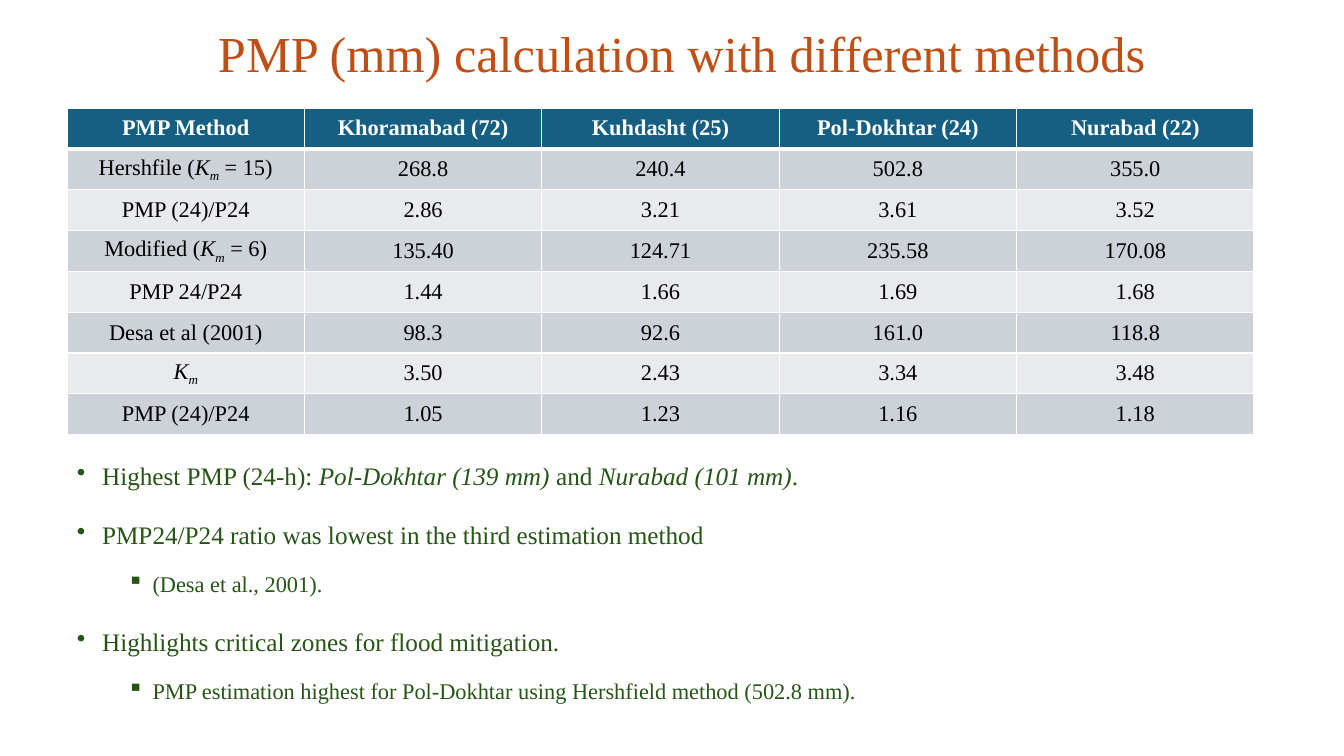
from dataclasses import dataclass

from lxml import etree
from pptx import Presentation
from pptx import util as u
from pptx.dml.color import RGBColor
from pptx.enum import text
from pptx.oxml import ns


@dataclass(frozen=True)
class Theme:
    font: str = "Times New Roman"
    title: str = "C04F15"
    body: str = "275417"
    header: str = "156082"
    bands: tuple = ("CCD2D8", "E8EAED")
    cell: str = "000000"
    white: str = "FFFFFF"
    title_size: int = 36
    bullet_sizes: tuple = (18, 16)
    table_size: int = 16


def px(length):
    return u.Emu(round(length * 914400 / 100.8))


class SlideBuilder:
    def __init__(self, slide, theme):
        self.slide = slide
        self.theme = theme

    def fill_paragraph(self, paragraph, parts, size, color, bold=False):
        """Fill a paragraph from a string or from (text, style) parts."""
        if isinstance(parts, str):
            parts = [(parts, "")]
        paragraph.text = parts[0][0]
        for words, _ in parts[1:]:
            paragraph.add_run().text = words
        for run, (_, style) in zip(paragraph.runs, parts):
            run.font.name = self.theme.font
            run.font.size = u.Pt(size)
            run.font.color.rgb = RGBColor.from_string(color)
            run.font.bold = bold
            run.font.italic = style in ("italic", "subscript")
            if style == "subscript":
                run._r.get_or_add_rPr().set("baseline", "-25000")

    def text_box(self, left, top, width, height):
        box = self.slide.shapes.add_textbox(*map(px, (left, top, width, height)))
        box.text_frame.word_wrap = True
        return box.text_frame

    def title(self, words, *bounds):
        frame = self.text_box(*bounds)
        frame.auto_size = text.MSO_AUTO_SIZE.SHAPE_TO_FIT_TEXT
        paragraph = frame.paragraphs[0]
        paragraph.alignment = text.PP_ALIGN.CENTER
        self.fill_paragraph(paragraph, words, self.theme.title_size, self.theme.title)

    def borders(self, cell, widths):
        properties = cell._tc.get_or_add_tcPr()
        for side, width in widths.items():
            line = etree.SubElement(properties, ns.qn(f"a:ln{side}"), w=str(u.Pt(width)))
            fill = etree.SubElement(line, ns.qn("a:solidFill"))
            etree.SubElement(fill, ns.qn("a:srgbClr"), val=self.theme.white)

    def table(self, rows, left, top, width, height):
        theme = self.theme
        frame = self.slide.shapes.add_table(
            len(rows), len(rows[0]), *map(px, (left, top, width, height)))
        for r, row in enumerate(rows):
            is_header = r == 0
            fill = theme.header if is_header else theme.bands[(r - 1) % 2]
            color = theme.white if is_header else theme.cell
            widths = {"L": 1, "R": 1, "T": 3 if r == 1 else 1, "B": 3 if is_header else 1}
            for c, parts in enumerate(row):
                cell = frame.table.cell(r, c)
                self.borders(cell, widths)
                cell.fill.solid()
                cell.fill.fore_color.rgb = RGBColor.from_string(fill)
                cell.vertical_anchor = text.MSO_ANCHOR.MIDDLE
                paragraph = cell.text_frame.paragraphs[0]
                paragraph.alignment = text.PP_ALIGN.CENTER
                self.fill_paragraph(paragraph, parts, theme.table_size, color, is_header)

    def bullets(self, items, *bounds):
        frame = self.text_box(*bounds)
        for number, (level, parts) in enumerate(items):
            paragraph = frame.add_paragraph() if number else frame.paragraphs[0]
            paragraph.level = level
            properties = paragraph._p.get_or_add_pPr()
            properties.set("marL", str(u.Inches((0.25, 0.75)[level])))
            properties.set("indent", str(u.Inches(-0.25)))
            etree.SubElement(properties, ns.qn("a:buChar"), char="•▪"[level])
            paragraph.line_spacing = 1.5
            paragraph.space_before = u.Pt((10, 5)[level] if number else 0)
            self.fill_paragraph(
                paragraph, parts, self.theme.bullet_sizes[level], self.theme.body)


def factor(before="", after=""):
    """The frequency factor K with its subscript, between plain words."""
    parts = [(before, ""), ("K", "italic"), ("m", "subscript"), (after, "")]
    return [part for part in parts if part[0]]


ROWS = [
    ["PMP Method", "Khoramabad (72)", "Kuhdasht (25)", "Pol-Dokhtar (24)", "Nurabad (22)"],
    [factor("Hershfile (", " = 15)"), "268.8", "240.4", "502.8", "355.0"],
    ["PMP (24)/P24", "2.86", "3.21", "3.61", "3.52"],
    [factor("Modified (", " = 6)"), "135.40", "124.71", "235.58", "170.08"],
    ["PMP 24/P24", "1.44", "1.66", "1.69", "1.68"],
    ["Desa et al (2001)", "98.3", "92.6", "161.0", "118.8"],
    [factor(), "3.50", "2.43", "3.34", "3.48"],
    ["PMP (24)/P24", "1.05", "1.23", "1.16", "1.18"],
]

FINDINGS = [
    (0, [("Highest PMP (24-h): ", ""), ("Pol-Dokhtar (139 mm)", "italic"),
         (" and ", ""), ("Nurabad (101 mm)", "italic"), (".", "")]),
    (0, "PMP24/P24 ratio was lowest in the third estimation method"),
    (1, "(Desa et al., 2001)."),
    (0, "Highlights critical zones for flood mitigation."),
    (1, "PMP estimation highest for Pol-Dokhtar using Hershfield method (502.8 mm)."),
]


def main():
    presentation = Presentation()
    presentation.slide_width, presentation.slide_height = px(1344), px(756)
    slide = presentation.slides.add_slide(presentation.slide_layouts[6])
    builder = SlideBuilder(slide, Theme())

    # Results table
    builder.table(ROWS, 67, 108, 1187, 327)

    # Title
    builder.title("PMP (mm) calculation with different methods", 126, 17, 1112, 72)

    # Findings
    builder.bullets(FINDINGS, 67, 440, 1187, 316)

    presentation.save("out.pptx")


if __name__ == "__main__":
    main()
